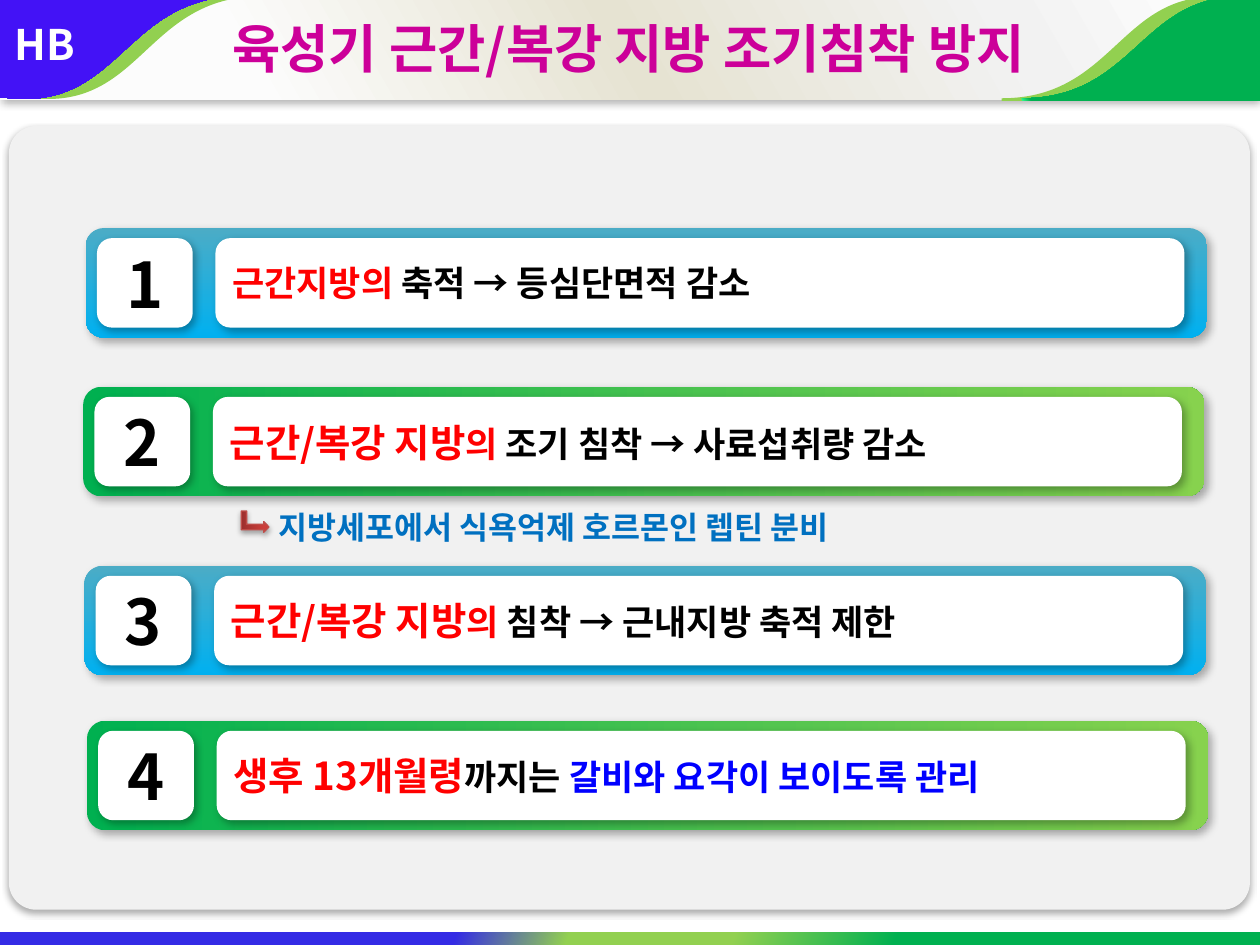
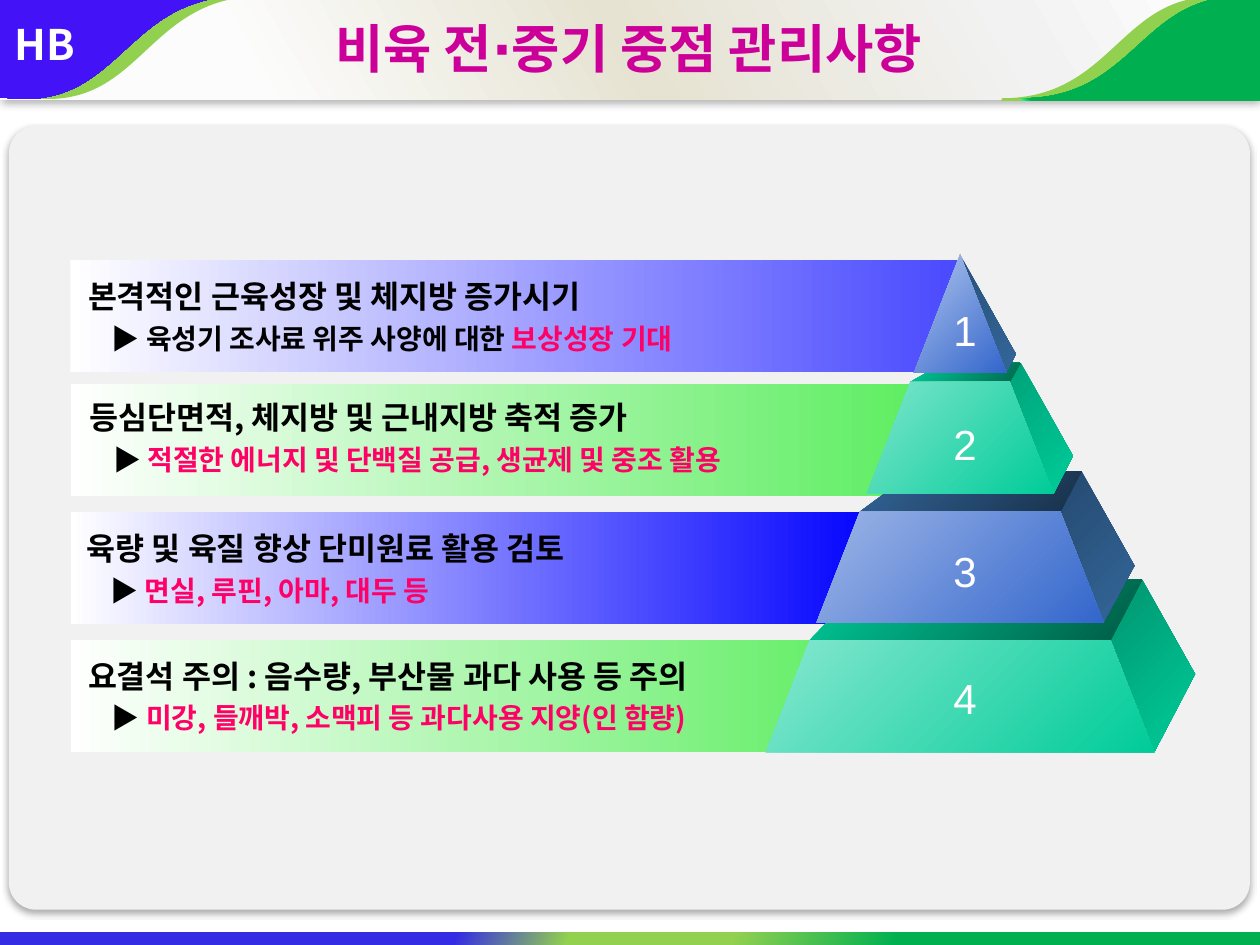
import pptx
import pptx.util
import pptx.dml.color
import pptx.enum.shapes
import pptx.enum.text
import pptx.oxml.ns
from lxml import etree

Inches = pptx.util.Inches
Pt = pptx.util.Pt
Preset = pptx.enum.shapes.MSO_SHAPE
Align = pptx.enum.text.PP_ALIGN
qn = pptx.oxml.ns.qn

COLOURS = {
    "white": "FFFFFF", "black": "000000", "panel": "F1F1F1", "lime": "92D050",
    "green": "00B050", "violet": "4312F6", "glow": "37FF92", "title": "CC0099",
    "red": "FF0000", "blue": "0000FF", "note": "0070C0", "pink": "FF0066",
    "arrow line": "BF4C48",
}
FONT = "Noto Sans CJK KR"
# opacity %, blur, distance, direction
SOFT_SHADOW = (32, 3.5, 2.2, 90)
CARD_SHADOW = (30, 4.5, 2.6, 53)
ARROW_SHADOW = (35, 3.1, 1.8, 90)


def draw(page, outline, place, fill, angle=0, shadow=None):
    """Draw a preset (place is a box) or a polygon (outline None, place is points).
    The fill is one colour or a list of (percent, colour) stops."""
    if outline is None:
        builder = page.shapes.build_freeform(
            *[Inches(v) for v in place[0]], scale=1.0)
        builder.add_line_segments([(Inches(x), Inches(y)) for x, y in place[1:]])
        shape = builder.convert_to_shape()
    else:
        shape = page.shapes.add_shape(outline, *[Inches(v) for v in place])
    if isinstance(fill, str):
        shape.fill.solid()
        shape.fill.fore_color.rgb = pptx.dml.color.RGBColor.from_string(fill)
    else:
        shape.fill.gradient()
        shape.fill.gradient_angle = (360 - angle) % 360
        stops = next(shape.element.spPr.iter(qn("a:gsLst")))
        for stop in list(stops):
            stops.remove(stop)
        for percent, colour in fill:
            stop = etree.SubElement(stops, qn("a:gs"), pos=str(percent * 1000))
            etree.SubElement(stop, qn("a:srgbClr"), val=colour)
    shape.line.fill.background()
    shape.shadow.inherit = False
    if shadow:
        opacity, blur, distance, direction = shadow
        effects = shape.element.spPr.find(qn("a:effectLst"))
        outer = etree.SubElement(
            effects, qn("a:outerShdw"), blurRad=str(Pt(blur)),
            dist=str(Pt(distance)), dir=str(direction * 60000),
            algn="ctr", rotWithShape="0")
        tint = etree.SubElement(outer, qn("a:srgbClr"), val=COLOURS["black"])
        etree.SubElement(tint, qn("a:alpha"), val=str(opacity * 1000))
    return shape


def write(shape, paragraphs, align=Align.LEFT, font=FONT, bold=True):
    """Fill a shape with (indent, [(text, size, colour name), ...]) paragraphs."""
    frame = shape.text_frame
    frame.word_wrap = True
    frame.auto_size = pptx.enum.text.MSO_AUTO_SIZE.NONE
    frame.vertical_anchor = pptx.enum.text.MSO_ANCHOR.MIDDLE
    for number, (indent, spans) in enumerate(paragraphs):
        para = frame.add_paragraph() if number else frame.paragraphs[0]
        para.alignment = align
        if number:
            para.space_before = Pt(3.5)
        if indent:
            para._p.get_or_add_pPr().set("marL", str(Inches(indent)))
        for text, size, colour in spans:
            span = para.add_run()
            span.text = text
            for key, value in {"name": font, "size": Pt(size), "bold": bold}.items():
                setattr(span.font, key, value)
            span.font.color.rgb = pptx.dml.color.RGBColor.from_string(COLOURS[colour])
            properties = span._r.get_or_add_rPr()
            properties.set("kern", "0")
            etree.SubElement(properties, qn("a:ea"), typeface=font)


deck = pptx.Presentation()
deck.slide_width = Inches(10)
deck.slide_height = Inches(7.5)
layout = deck.slide_layouts[5]

# Title and footer of each slide
pages = []
for title in ["육성기 근간/복강 지방 조기침착 방지", "비육 전∙중기 중점 관리사항"]:
    page = deck.slides.add_slide(layout)
    pages.append(page)
    draw(page, Preset.RECTANGLE, (0, 7.4, 10.01, .13),
         [(36, "342BE5"), (45, COLOURS["lime"]), (58, COLOURS["lime"]),
          (71, COLOURS["green"])], 20)
    heading = page.shapes.title
    place = {"left": 0, "top": .03, "width": 9.98, "height": .7}
    for key, value in place.items():
        setattr(heading, key, Inches(value))
    write(heading, [(0, [(title, 30, "title")])], Align.CENTER)
    page.shapes._spTree.append(heading.element)

# Shared frame: panel, header band, swooshes and badge
page = pages[0]
panel = draw(page, Preset.ROUNDED_RECTANGLE, (.07, 1, 9.85, 6.22),
             COLOURS["panel"], shadow=SOFT_SHADOW)
panel.adjustments[0] = .035
band = draw(page, Preset.RECTANGLE, (0, -.02, 9.98, .81),
            [(0, "FFFFFF"), (20, "F2F2F2"), (50, "E6E3D2"), (80, "FCFCFC"),
             (99, "FFFFFF")], 150, CARD_SHADOW)
frame_parts = [panel, band]

# Each swoosh: curve control points, closing corners, fill, angle
swooshes = [
    ([(2.08, -.03), (1.13, -.03), (1.13, .92), (.19, .77)],
     [(.19, -.04), (2.08, -.04)], COLOURS["lime"], 0),
    ([(1.92, -.03), (.96, -.03), (.96, .92), (0, .77)],
     [(0, -.04), (1.92, -.04)],
     [(0, COLOURS["glow"]), (6, COLOURS["violet"])], 135),
    ([(7.95, .78), (8.89, .78), (8.89, -.16), (9.83, -.01)],
     [(9.83, .8), (7.95, .8)], COLOURS["lime"], 0),
    ([(8.11, .78), (9.06, .78), (9.05, -.13), (10.01, -.02)],
     [(10.01, .8), (8.11, .8)],
     [(0, COLOURS["glow"]), (3, COLOURS["green"])], 315),
]
for curve, corners, fill, angle in swooshes:
    swoosh = draw(page, None, [curve[0], curve[3]] + corners, fill, angle)
    edge = next(swoosh.element.spPr.iter(qn("a:lnTo")))
    bend = etree.Element(qn("a:cubicBezTo"))
    for x, y in curve[1:]:
        etree.SubElement(bend, qn("a:pt"), x=str(Inches(x) - swoosh.left),
                         y=str(Inches(y) - swoosh.top))
    edge.getparent().replace(edge, bend)
    frame_parts.append(swoosh)

badge = page.shapes.add_textbox(*[Inches(v) for v in (.02, .05, .9, .6)])
write(badge, [(0, [("HB", 24, "white")])])
frame_parts.append(badge)

# Move the frame into the layout, where both slides use it
for number, part in enumerate(frame_parts, 100):
    next(part.element.iter(qn("p:cNvPr"))).set("id", str(number))
    layout.shapes._spTree.append(part.element)

# Slide 1: numbered cards
card_fills = [([(0, "4BACC6"), (100, "00B0F0")], 90),
              ([(0, COLOURS["green"]), (100, "87D24E")], 0)]
fat = [("근간/복강 지방", 22, "red"), ("의 ", 20, "red")]
cards = [
    (.68, 1.81, [("근간지방의", 20, "red"), (" 축적 → 등심단면적 감소", 20, "black")]),
    (.66, 3.07, fat + [("조기 침착 → 사료섭취량 감소", 20, "black")]),
    (.67, 4.49, fat + [("침착 → 근내지방 축적 제한", 20, "black")]),
    (.69, 5.72, [("생후 13개월령", 22, "red"), ("까지는 ", 20, "black"),
                 ("갈비와 요각이 보이도록 관리", 20, "blue")]),
]
for index, (left, top, spans) in enumerate(cards):
    fill, angle = card_fills[index % 2]
    draw(page, Preset.ROUNDED_RECTANGLE, (left, top, 8.9, .87), fill, angle, CARD_SHADOW)
    for offset, width, content, align in [
            (.09, .76, [(str(index + 1), 36, "black")], Align.CENTER),
            (1.03, 7.69, spans, Align.LEFT)]:
        plate = draw(page, Preset.ROUNDED_RECTANGLE,
                     (left + offset, top + .08, width, .71),
                     COLOURS["white"], shadow=CARD_SHADOW)
        write(plate, [(0, content)], align)

# Note under card 2
arrow = draw(page, Preset.BENT_UP_ARROW, (1.94, 4.03, .17, .22),
             [(0, "9C2F2D"), (80, "CB3E3A"), (100, "CE3B37")], 270, ARROW_SHADOW)
arrow.rotation = 90
arrow.line.color.rgb = pptx.dml.color.RGBColor.from_string(COLOURS["arrow line"])
arrow.line.width = Pt(.75)
note = page.shapes.add_textbox(*[Inches(v) for v in (2.11, 3.93, 5.49, .5)])
write(note, [(0, [("지방세포에서 식욕억제 호르몬인 렙틴 분비", 18, "note")])])

# Slide 2: gradient bars: top, width, end colour, text place, heading, detail
page = pages[1]
bars = [
    (2.06, 7.06, "4A4AFF", (.6, 2.11), "본격적인 근육성장 및 체지방 증가시기",
     [("▶ 육성기 조사료 위주 사양에 대한 ", 16, "black"), ("보상성장 기대", 16, "pink")]),
    (3.05, 6.79, "5DED60", (.61, 3.07), "등심단면적, 체지방 및 근내지방 축적 증가",
     [("▶ ", 16, "black"), ("적절한 에너지 및 단백질 공급, 생균제 및 중조 활용", 16, "pink")]),
    (4.06, 6.45, "0000FF", (.59, 4.11), "육량 및 육질 향상 단미원료 활용 검토",
     [("▶ ", 16, "black"), ("면실, 루핀, 아마, 대두 등", 16, "pink")]),
    (5.08, 6.41, "5DED60", (.6, 5.12), "요결석 주의 : 음수량, 부산물 과다 사용 등 주의",
     [("▶ ", 16, "black"), ("미강, 들깨박, 소맥피 등 과다사용 지양(인 함량)", 16, "pink")]),
]
for top, width, colour, corner, headline, detail in bars:
    draw(page, Preset.RECTANGLE, (.56, top, width, .89),
         [(0, COLOURS["white"]), (100, colour)])
    box = page.shapes.add_textbox(*[Inches(v) for v in corner + (6.35, .8)])
    write(box, [(0, [(headline, 18, "black")]), (.19, detail)])

# Pyramid: every edge runs down from the apex at a fixed slope
APEX_X, APEX_Y = 7.62, 2.02
FRONT_SLOPE, BACK_SLOPE = .39, .56
# front top and bottom, back top and bottom, back left x, side, lid, face colours
tiers = [
    (2.02, 2.96, 2.02, 2.81, None, ("285179", "336699"), None, ("B1C5EC", "3366CC")),
    (3.03, 3.92, 2.88, 3.62, 7.49, ("00A279", "00CC99"), ("00CC99", "00684E"),
     ("7FE5CC", "00CC99")),
    (4.06, 4.94, 3.74, 4.49, 7.26, ("254A70", "336699"), ("336699", "183049"),
     ("9EB6E7", "3366CC")),
    (5.08, 5.97, 4.6, 5.35, 6.89, ("009570", "00CC99"), ("00CC99", "005A44"),
     ("86E7CF", "00CC99")),
]
for top, bottom, back_top, back_bottom, back_left, side, lid, face in reversed(tiers):
    top_half, bottom_half = [FRONT_SLOPE * (y - APEX_Y) for y in (top, bottom)]
    top_left, top_right = (APEX_X - top_half, top), (APEX_X + top_half, top)
    low_left, low_right = (APEX_X - bottom_half, bottom), (APEX_X + bottom_half, bottom)
    back_high, back_low = [(APEX_X + BACK_SLOPE * (y - APEX_Y), y)
                           for y in (back_top, back_bottom)]
    if lid:
        faces = [([low_right, top_right, back_high, back_low], side),
                 ([top_left, top_right, back_high, (back_left, back_top)], lid),
                 ([low_left, low_right, top_right, top_left], face)]
    else:
        faces = [([low_right, back_low, top_right], side),
                 ([low_left, low_right, top_right], face)]
    for points, (start, end) in faces:
        draw(page, None, points + points[:1], [(0, start), (100, end)], 45)

# Tier numbers
for number, middle in enumerate([2.62, 3.52, 4.53, 5.54], 1):
    box = page.shapes.add_textbox(*[Inches(v) for v in (7.41, middle - .25, .5, .5)])
    write(box, [(0, [(str(number), 24, "white")])], Align.CENTER, "Arial", False)

deck.save("out.pptx")
